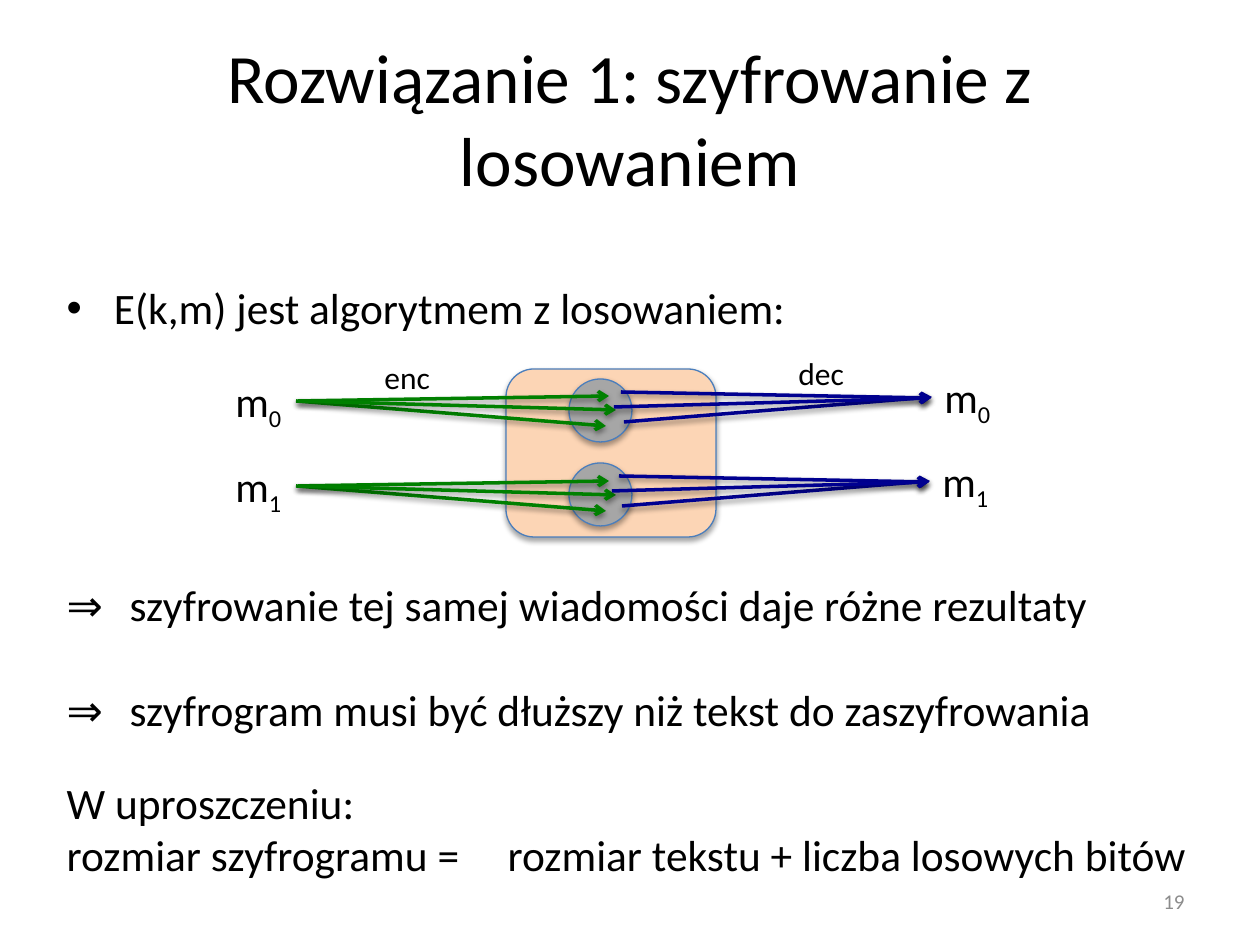
import lxml.etree
import pptx
import pptx.dml.color
import pptx.enum.shapes
import pptx.enum.text
import pptx.oxml
import pptx.oxml.ns
import pptx.util

PX = 7257
ALIGN = pptx.enum.text.PP_ALIGN
ANCHOR = pptx.enum.text.MSO_ANCHOR
SHAPE = pptx.enum.shapes.MSO_SHAPE
qn = pptx.oxml.ns.qn


def color(value):
    return pptx.dml.color.RGBColor.from_string(value)


def write(paragraph, text, size=24.8, ink="000000", align=ALIGN.LEFT, before=0, subscript=""):
    paragraph.alignment = align
    paragraph.space_before = pptx.util.Pt(before)
    paragraph.text = text
    if subscript:
        paragraph.add_run().text = subscript
        paragraph.runs[-1].font._element.set("baseline", "-25000")
    for run in paragraph.runs:
        run.font.name = "Calibri"
        run.font.size = pptx.util.Pt(size)
        run.font.color.rgb = color(ink)


presentation = pptx.Presentation()
presentation.slide_width = 1260 * PX
presentation.slide_height = 945 * PX
slide = presentation.slides.add_slide(presentation.slide_layouts[1])
title, body = slide.placeholders

for placeholder, box in ((title, (63, 38, 1134, 158)), (body, (54, 275, 1155, 564))):
    placeholder.left, placeholder.top, placeholder.width, placeholder.height = [v * PX for v in box]
    placeholder.text_frame.auto_size = pptx.enum.text.MSO_AUTO_SIZE.NONE
    placeholder.text_frame.word_wrap = True

title.text_frame.vertical_anchor = ANCHOR.MIDDLE
write(title.text_frame.paragraphs[0], "Rozwiązanie 1: szyfrowanie z losowaniem", size=39.6, align=ALIGN.CENTER)

write(body.text_frame.paragraphs[0], "E(k,m) jest algorytmem z losowaniem:")
conclusions = (
    ("⇒\tszyfrowanie tej samej wiadomości daje różne rezultaty", 140, 56),
    ("⇒\tszyfrogram musi być dłuższy niż tekst do zaszyfrowania", 29.8, 56),
    ("W uproszczeniu:\vrozmiar szyfrogramu =\trozmiar tekstu + liczba losowych bitów", 23.8, 423),
)
for text, before, tab in conclusions:
    paragraph = body.text_frame.add_paragraph()
    write(paragraph, text, before=before)
    properties = paragraph._p.get_or_add_pPr()
    properties.set("marL", "0")
    properties.set("indent", "0")
    lxml.etree.SubElement(properties, qn("a:buNone"))
    tabs = lxml.etree.SubElement(properties, qn("a:tabLst"))
    lxml.etree.SubElement(tabs, qn("a:tab"), pos=str(tab * PX), algn="l")

shadowed = []
ciphertexts = (
    (SHAPE.ROUNDED_RECTANGLE, 506, 369, 210, 168, "FCD5B5"),
    (SHAPE.OVAL, 569, 379, 63, 63, "A6A6A6"),
    (SHAPE.OVAL, 569, 463, 63, 63, "A6A6A6"),
)
for kind, left, top, width, height, fill in ciphertexts:
    shape = slide.shapes.add_shape(kind, left * PX, top * PX, width * PX, height * PX)
    shape.shadow.inherit = False
    shape.fill.solid()
    shape.fill.fore_color.rgb = color(fill)
    shape.line.color.rgb = color("4B7EBC")
    shape.line.width = pptx.util.Pt(0.75)
    shadowed.append((shape, 35))

labels = [("enc", "", 18, 372, 352, 72, 50), ("dec", "", 18, 786, 348, 72, 50)]
sides = (
    ("008000", "a:tailEnd", (223, 369), (0, 85),
     ((298, 401, 609, 396), (296, 401, 606, 426), (298, 401, 616, 410))),
    ("000090", "a:headEnd", (932, 365), (-2, 84),
     ((931, 398, 621, 392), (932, 397, 624, 422), (931, 398, 614, 407))),
)
for ink, arrow_end, (label_left, label_top), (shift_x, shift_y), arrows in sides:
    for row in range(2):
        dx, dy = row * shift_x, row * shift_y
        labels.append(("m", str(row), 24, label_left + dx, label_top + dy, 73, 63))
        for x1, y1, x2, y2 in arrows:
            arrow = slide.shapes.add_connector(
                pptx.enum.shapes.MSO_CONNECTOR.STRAIGHT,
                (x1 + dx) * PX, (y1 + dy) * PX, (x2 + dx) * PX, (y2 + dy) * PX)
            arrow.line.color.rgb = color(ink)
            arrow.line.width = pptx.util.Pt(2)
            lxml.etree.SubElement(arrow.line._get_or_add_ln(), qn(arrow_end), type="arrow")
            lxml.etree.SubElement(arrow._element.spPr, qn("a:effectLst"))
            shadowed.append((arrow, 38))

for shape, opacity in shadowed:
    effects = shape._element.spPr.find(qn("a:effectLst"))
    shadow = lxml.etree.SubElement(
        effects, qn("a:outerShdw"), blurRad="40000", dist="22000", dir="5400000", rotWithShape="0")
    tint = lxml.etree.SubElement(shadow, qn("a:srgbClr"), val="000000")
    lxml.etree.SubElement(tint, qn("a:alpha"), val=str(opacity * 1000))

for text, subscript, size, left, top, width, height in labels:
    label = slide.shapes.add_textbox(left * PX, top * PX, width * PX, height * PX)
    label.text_frame.word_wrap = False
    write(label.text_frame.paragraphs[0], text, size=size, subscript=subscript)

page_number = slide.shapes.add_textbox(903 * PX, 876 * PX, 294 * PX, 50 * PX)
page_number.text_frame.word_wrap = True
page_number.text_frame.vertical_anchor = ANCHOR.MIDDLE
write(page_number.text_frame.paragraphs[0], "19", size=12, ink="8C8C8C", align=ALIGN.RIGHT)

presentation.save("out.pptx")
